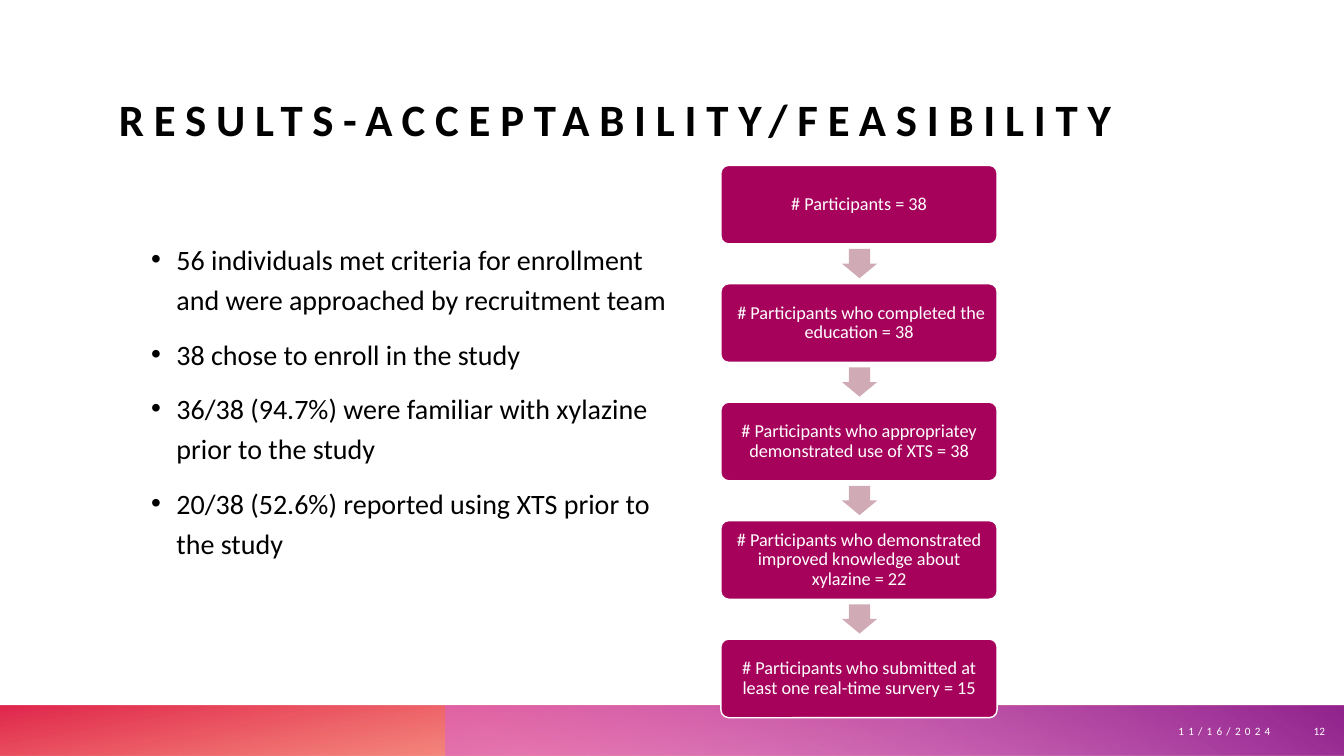
import pptx
import pptx.dml.color
import pptx.enum.shapes
import pptx.enum.text
import pptx.oxml.ns
import pptx.oxml.xmlchemy
import pptx.util
from pptx.util import Inches

THEME = {
    "font": "Calibri", "text": "000000", "light": "FFFFFF",
    "step": "A6025C", "arrow": "D0ABB6",
    "warm": [(0.14, "FE4A00", 28), (1, "DA002F", 85)],
    "violet": [(0.09, "D861D4", 55), (0.99, "92248E", 100)],
    "title_size": 32, "body_size": 20, "step_size": 13, "footer_size": 8,
}
SHAPES = pptx.enum.shapes.MSO_SHAPE
ALIGN = pptx.enum.text.PP_ALIGN
ANCHOR = pptx.enum.text.MSO_ANCHOR


def color(name):
    return pptx.dml.color.RGBColor.from_string(THEME.get(name, name))


def write(box, lines, size, shade, anchor, align, inset=(0, 0), bold=False, spacing=0):
    frame = box.text_frame
    frame.word_wrap = True
    frame.vertical_anchor = anchor
    frame.margin_left = frame.margin_right = Inches(inset[0])
    frame.margin_top = frame.margin_bottom = Inches(inset[1])
    for index, line in enumerate(lines):
        para = frame.add_paragraph() if index else frame.paragraphs[0]
        para.alignment = align
        span = para.add_run()
        span.text = line
        span.font.name = THEME["font"]
        span.font.size = pptx.util.Pt(THEME[size])
        span.font.bold = bold
        span.font.color.rgb = color(shade)
        if spacing:
            span.font._element.set("spc", str(spacing * 100))
    return frame.paragraphs


deck = pptx.Presentation()
deck.slide_width = Inches(13.33)
deck.slide_height = Inches(7.5)
page = deck.slides.add_slide(deck.slide_layouts[6])

bands = [(0, 13.33, 180, 100, "warm"), (4.42, 8.91, 0, 240, "violet")]
for left, width, rotation, angle, stops in bands:
    band = page.shapes.add_shape(
        SHAPES.RECTANGLE, Inches(left), Inches(7), Inches(width), Inches(0.5))
    band.shadow.inherit = False
    band.line.fill.background()
    band.rotation = rotation
    band._element.spPr.xfrm.set("flipH", "1")
    band.fill.gradient()
    band.fill.gradient_angle = 360 - angle
    for stop, (position, shade, opacity) in zip(band.fill.gradient_stops, THEME[stops]):
        stop.position = position
        stop.color.rgb = color(shade)
    tints = list(band._element.spPr.iter(pptx.oxml.ns.qn("a:srgbClr")))
    for tint, (position, shade, opacity) in zip(tints, THEME[stops]):
        alpha = pptx.oxml.xmlchemy.OxmlElement("a:alpha")
        alpha.set("val", str(opacity * 1000))
        tint.append(alpha)

title = page.shapes.add_textbox(Inches(1.18), Inches(0.02), Inches(11.82), Inches(1.42))
write(title, ["RESULTS-ACCEPTABILITY/FEASIBILITY"], "title_size", "text",
      ANCHOR.BOTTOM, ALIGN.LEFT, bold=True, spacing=7)

for left, width, label, spacing in [(8.65, 4.05, "11/16/2024", 3), (12.76, 0.48, "12", 0)]:
    footer = page.shapes.add_textbox(Inches(left), Inches(7.01), Inches(width), Inches(0.49))
    write(footer, [label], "footer_size", "light", ANCHOR.MIDDLE, ALIGN.RIGHT,
          inset=(0.1, 0.05), spacing=spacing)

steps = [
    "# Participants = 38",
    " # Participants who completed the education = 38",
    "# Participants who appropriatey demonstrated use of XTS = 38",
    "# Participants who demonstrated improved knowledge about xylazine = 22",
    "# Participants who submitted at least one real-time survery = 15",
]
step_pitch = 1.175
for index, label in enumerate(steps):
    top = 1.64 + index * step_pitch
    step = page.shapes.add_shape(
        SHAPES.ROUNDED_RECTANGLE, Inches(7.15), Inches(top), Inches(2.74), Inches(0.78))
    step.adjustments[0] = 0.1
    step.shadow.inherit = False
    step.fill.solid()
    step.fill.fore_color.rgb = color("step")
    step.line.color.rgb = color("light")
    step.line.width = pptx.util.Pt(1)
    para = write(step, [label], "step_size", "light", ANCHOR.MIDDLE, ALIGN.CENTER,
                 inset=(0.07, 0.07))[0]
    para.line_spacing = 0.9
    if index < len(steps) - 1:
        arrow = page.shapes.add_shape(
            SHAPES.DOWN_ARROW, Inches(8.35), Inches(top + 0.83), Inches(0.35), Inches(0.29))
        arrow.adjustments[0] = 0.6
        arrow.adjustments[1] = 0.5
        arrow.shadow.inherit = False
        arrow.fill.solid()
        arrow.fill.fore_color.rgb = color("arrow")
        arrow.line.fill.background()

findings = [
    "56 individuals met criteria for enrollment and were approached by recruitment team",
    "38 chose to enroll in the study",
    "36/38 (94.7%) were familiar with xylazine prior to the study",
    "20/38 (52.6%) reported using XTS prior to the study",
]
body = page.shapes.add_textbox(Inches(1.5), Inches(2.34), Inches(5.14), Inches(4.3))
for para in write(body, findings, "body_size", "text", ANCHOR.TOP, ALIGN.LEFT):
    para.line_spacing = 1.2
    para.space_before = pptx.util.Pt(10)
    properties = para._p.get_or_add_pPr()
    properties.set("marL", str(Inches(0.25)))
    properties.set("indent", str(-Inches(0.25)))
    typeface = pptx.oxml.xmlchemy.OxmlElement("a:buFont")
    typeface.set("typeface", "Arial")
    bullet = pptx.oxml.xmlchemy.OxmlElement("a:buChar")
    bullet.set("char", "•")
    properties.extend([typeface, bullet])

deck.save("out.pptx")
